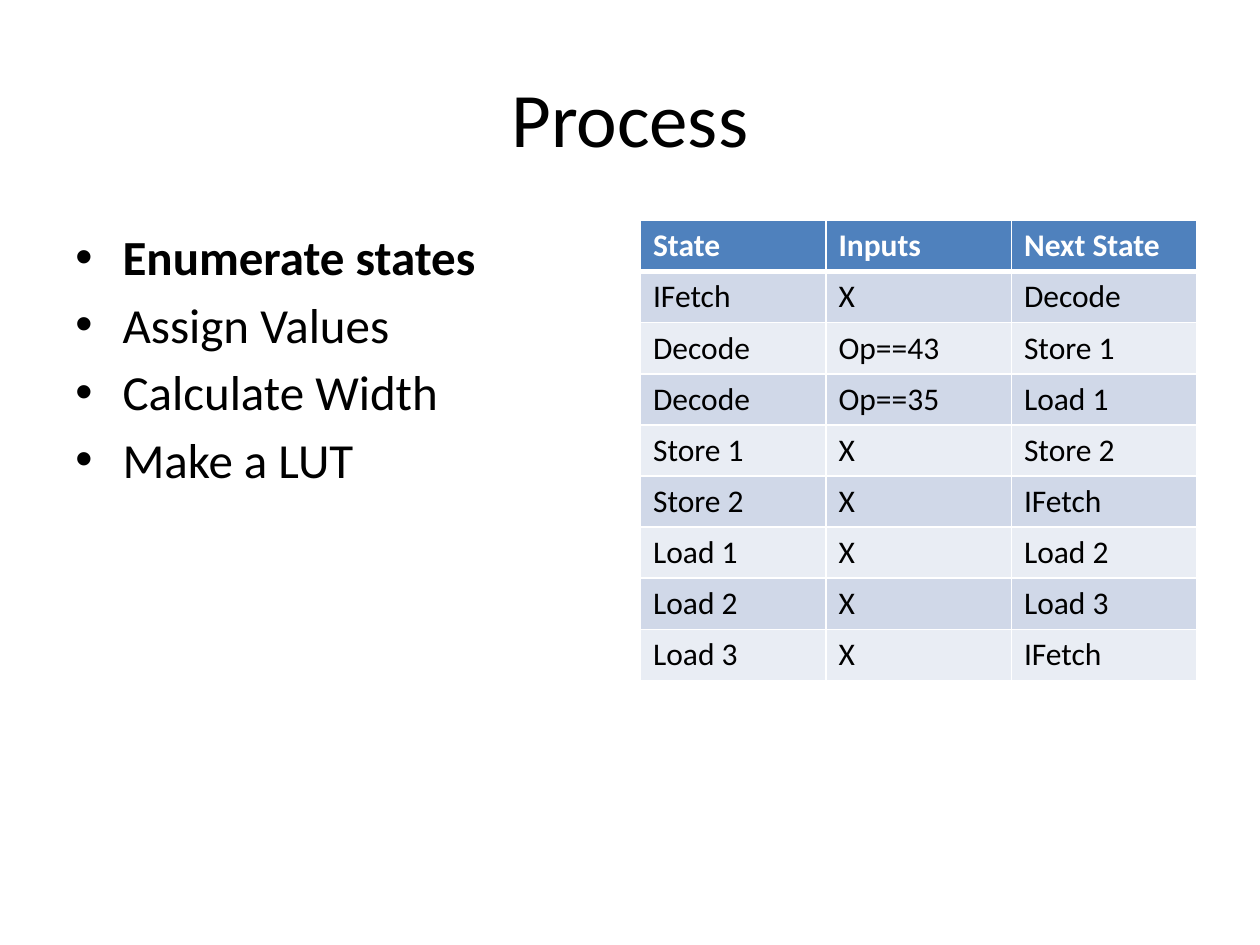
from typing import NamedTuple

from lxml import etree
from pptx import Presentation
from pptx.dml.color import RGBColor
from pptx.enum import text
from pptx.oxml import ns
from pptx.util import Pt

FONT = "Calibri"
BLACK, WHITE, BLUE = "000000", "FFFFFF", "4F81BD"
BANDS = ("D0D8E8", "E9EDF4")


class Box(NamedTuple):
    left: float
    top: float
    width: float
    height: float


class Style(NamedTuple):
    size: float
    color: str = BLACK
    bold: bool = False


class Transition(NamedTuple):
    state: str
    inputs: str
    next_state: str


TITLE = Box(36, 21.6, 648, 90)
BODY = Box(36, 126, 318, 356.4)
TABLE = Box(366, 126, 318, 262.8)

STEPS = ["Enumerate states", "Assign Values", "Calculate Width", "Make a LUT"]
HEADER = Transition("State", "Inputs", "Next State")
TRANSITIONS = [
    Transition("IFetch", "X", "Decode"),
    Transition("Decode", "Op==43", "Store 1"),
    Transition("Decode", "Op==35", "Load 1"),
    Transition("Store 1", "X", "Store 2"),
    Transition("Store 2", "X", "IFetch"),
    Transition("Load 1", "X", "Load 2"),
    Transition("Load 2", "X", "Load 3"),
    Transition("Load 3", "X", "IFetch"),
]


def rgb(color: str) -> RGBColor:
    return RGBColor.from_string(color)


def place(box: Box) -> list:
    return [Pt(value) for value in box]


def format_runs(p, style: Style) -> None:
    for r in p.runs:
        r.font.name = FONT
        r.font.size = Pt(style.size)
        r.font.bold = style.bold
        r.font.color.rgb = rgb(style.color)


def add_text(s, box: Box, lines: list[str], style: Style):
    tf = s.shapes.add_textbox(*place(box)).text_frame
    tf.word_wrap = True
    tf.text = "\n".join(lines)
    for p in tf.paragraphs:
        format_runs(p, style)
    return tf


def add_bullet(p, indent: float) -> None:
    pPr = p._p.get_or_add_pPr()
    pPr.set("marL", str(Pt(indent)))
    pPr.set("indent", str(Pt(-indent)))
    etree.SubElement(pPr, ns.qn("a:buFont"), typeface="Arial")
    etree.SubElement(pPr, ns.qn("a:buChar"), char="•")


def set_borders(cell, top: float, bottom: float) -> None:
    tcPr = cell._tc.get_or_add_tcPr()
    widths = {"lnL": 1, "lnR": 1, "lnT": top, "lnB": bottom}
    for i, (side, width) in enumerate(widths.items()):
        ln = etree.Element(ns.qn(f"a:{side}"), w=str(Pt(width)))
        fill = etree.SubElement(ln, ns.qn("a:solidFill"))
        etree.SubElement(fill, ns.qn("a:srgbClr"), val=WHITE)
        tcPr.insert(i, ln)


def add_state_table(s, box: Box, rows: list[Transition]) -> None:
    table = s.shapes.add_table(len(rows), len(HEADER), *place(box)).table
    for i, row in enumerate(rows):
        is_header = i == 0
        fill = BLUE if is_header else BANDS[(i - 1) % 2]
        style = Style(18, WHITE, True) if is_header else Style(18)
        for j, value in enumerate(row):
            cell = table.cell(i, j)
            cell.text_frame.text = value
            format_runs(cell.text_frame.paragraphs[0], style)
            cell.fill.solid()
            cell.fill.fore_color.rgb = rgb(fill)
            # A thicker rule separates the header from the states
            set_borders(cell, top=3 if i == 1 else 1, bottom=3 if is_header else 1)


def main() -> None:
    prs = Presentation()
    prs.slide_width, prs.slide_height = Pt(720), Pt(540)
    s = prs.slides.add_slide(prs.slide_layouts[6])

    # Title
    tf = add_text(s, TITLE, ["Process"], Style(44))
    tf.vertical_anchor = text.MSO_ANCHOR.MIDDLE
    tf.paragraphs[0].alignment = text.PP_ALIGN.CENTER

    # Steps, with the current one in bold
    tf = add_text(s, BODY, STEPS, Style(28))
    for p in tf.paragraphs:
        p.space_before = Pt(5)
        add_bullet(p, 27)
    tf.paragraphs[0].runs[0].font.bold = True

    # State transitions
    add_state_table(s, TABLE, [HEADER, *TRANSITIONS])

    prs.save("out.pptx")


if __name__ == "__main__":
    main()
